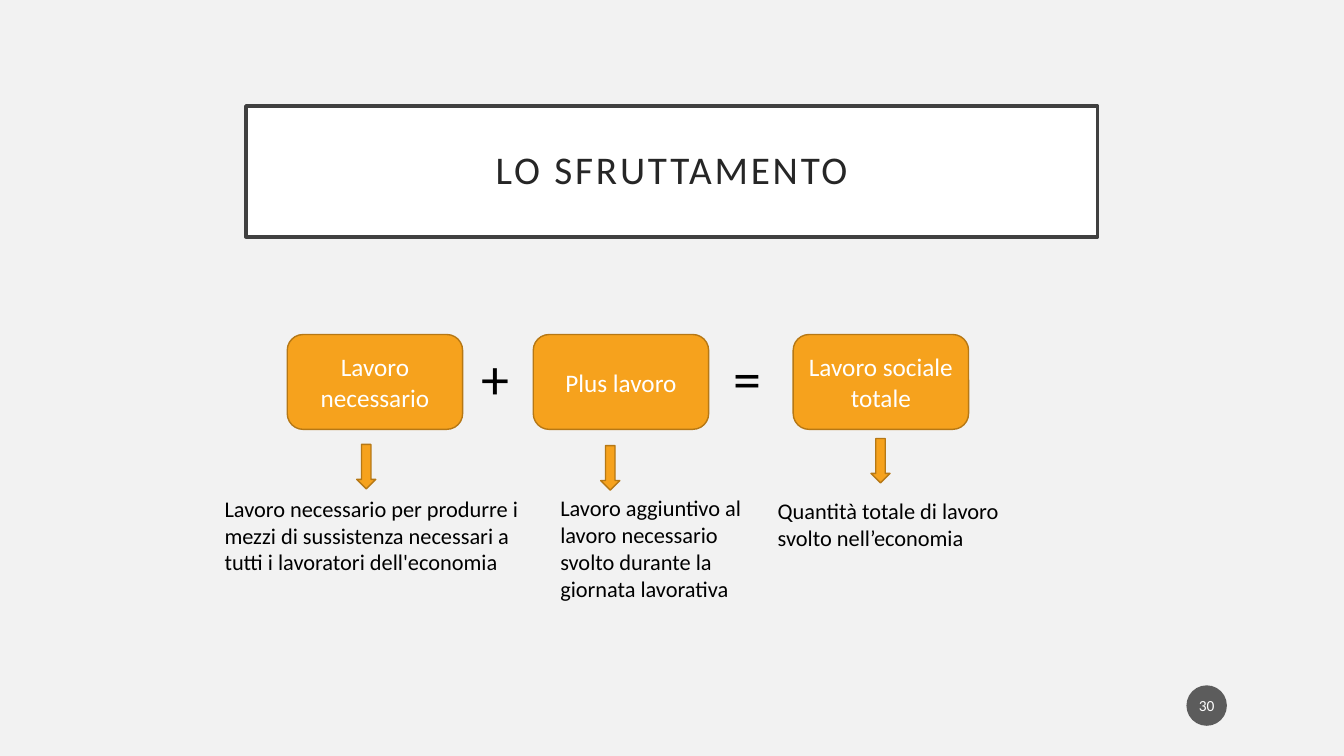
import pptx
import pptx.util
import pptx.dml.color
import pptx.enum.shapes
import pptx.enum.text
import pptx.oxml
import pptx.oxml.ns

Cm, Pt = pptx.util.Cm, pptx.util.Pt
SHAPE = pptx.enum.shapes.MSO_SHAPE
ANCHOR = pptx.enum.text.MSO_ANCHOR
ALIGN = pptx.enum.text.PP_ALIGN
FIT = pptx.enum.text.MSO_AUTO_SIZE

COLORS = {
    "background": "F2F2F2", "white": "FFFFFF", "black": "000000",
    "orange": "F6A21D", "orange_line": "B67815",
    "title_line": "404040", "title_text": "262626", "badge": "1D1D1D",
}


def rgb(name):
    return pptx.dml.color.RGBColor.from_string(COLORS[name])


def write(tf, text, size=16, color="black", font="Calibri", align=ALIGN.LEFT,
          anchor=ANCHOR.TOP, wrap=True, fit=FIT.NONE, line_spacing=None,
          tracking=None, insets=(0.25, 0.13)):
    """Fill a text frame; insets are horizontal and vertical, in cm."""
    tf.auto_size = fit
    tf.word_wrap = wrap
    tf.vertical_anchor = anchor
    tf.margin_left = tf.margin_right = Cm(insets[0])
    tf.margin_top = tf.margin_bottom = Cm(insets[1])
    p = tf.paragraphs[0]
    p.alignment = align
    if line_spacing:
        p.line_spacing = line_spacing
    r = p.add_run()
    r.text = text
    r.font.name = font
    r.font.size = Pt(size)
    r.font.color.rgb = rgb(color)
    if tracking:
        r.font._element.set("spc", str(tracking * 100))


class SlideBuilder:
    def __init__(self, prs):
        self.slide = prs.slides.add_slide(prs.slide_layouts[5])
        self.slide.background.fill.solid()
        self.slide.background.fill.fore_color.rgb = rgb("background")

    def paint(self, sp, fill, line=None, width=1):
        sp.fill.solid()
        sp.fill.fore_color.rgb = rgb(fill)
        if line:
            sp.line.color.rgb = rgb(line)
            sp.line.width = Pt(width)
        else:
            sp.line.fill.background()

    def title(self, text, left, top, width, height):
        sp = self.slide.shapes.title
        sp.left, sp.top, sp.width, sp.height = map(Cm, (left, top, width, height))
        self.paint(sp, "white", "title_line", 2.5)
        write(sp.text_frame, text, size=28, color="title_text", align=ALIGN.CENTER,
              anchor=ANCHOR.MIDDLE, line_spacing=0.9, tracking=2, insets=(0.5, 0.5))

    def shape(self, kind, left, top, width, height, fill="orange",
              line="orange_line", parent=None):
        shapes = (parent or self.slide).shapes
        sp = shapes.add_shape(kind, *map(Cm, (left, top, width, height)))
        sp.shadow.inherit = False
        self.paint(sp, fill, line)
        return sp

    def box(self, text, left, top, width, height, parent):
        sp = self.shape(SHAPE.ROUNDED_RECTANGLE, left, top, width, height, parent=parent)
        write(sp.text_frame, text, size=18, color="white", align=ALIGN.CENTER,
              anchor=ANCHOR.MIDDLE)

    def text(self, text, left, top, width, height, parent=None, **style):
        shapes = (parent or self.slide).shapes
        sp = shapes.add_textbox(*map(Cm, (left, top, width, height)))
        write(sp.text_frame, text, fit=FIT.SHAPE_TO_FIT_TEXT, **style)

    def badge(self, text, left, top, size):
        sp = self.shape(SHAPE.OVAL, left, top, size, size, fill="badge", line=None)
        color = sp.fill._xPr.find(".//" + pptx.oxml.ns.qn("a:srgbClr"))
        alpha = pptx.oxml.parse_xml(
            f'<a:alpha {pptx.oxml.ns.nsdecls("a")} val="70000"/>')
        color.append(alpha)
        write(sp.text_frame, text, size=11, color="white", align=ALIGN.CENTER,
              anchor=ANCHOR.MIDDLE, insets=(0.05, 0.13))


def main():
    prs = pptx.Presentation()
    prs.slide_width, prs.slide_height = Cm(33.87), Cm(19.05)
    s = SlideBuilder(prs)

    # Title and page number
    s.title("LO SFRUTTAMENTO", 6.2, 2.67, 21.46, 3.3)
    s.badge("30", 29.9, 17.27, 1.02)

    # Equation: three boxes joined by two operators
    equation = s.slide.shapes.add_group_shape()
    for label, left in (("Lavoro necessario", 7.24), ("Plus lavoro", 13.44),
                        ("Lavoro sociale totale", 19.99)):
        s.box(label, left, 8.43, 4.42, 2.39, equation)
    for sign, left in (("+", 11.89), ("=", 18.24)):
        s.text(sign, left, 8.53, 1.35, 1.96, equation, size=40, wrap=False)

    # Arrows from each term to its explanation
    for left, top in ((8.99, 11.2), (15.14, 11.23), (21.95, 11.05)):
        s.shape(SHAPE.DOWN_ARROW, left, top, 0.48, 1.12)

    # Explanations
    explanations = (
        ("Lavoro necessario per produrre i mezzi di sussistenza necessari a "
         "tutti i lavoratori dell'economia", 5.41, 12.34, 8.46, 3),
        ("Lavoro aggiuntivo al lavoro necessario svolto durante la "
         "giornata lavorativa", 13.87, 12.32, 5.49, 3),
        ("Quantità totale di lavoro svolto nell’economia", 19.35, 12.4, 6.17, 2.31),
    )
    for explanation in explanations:
        s.text(*explanation)

    prs.save("out.pptx")


if __name__ == "__main__":
    main()
